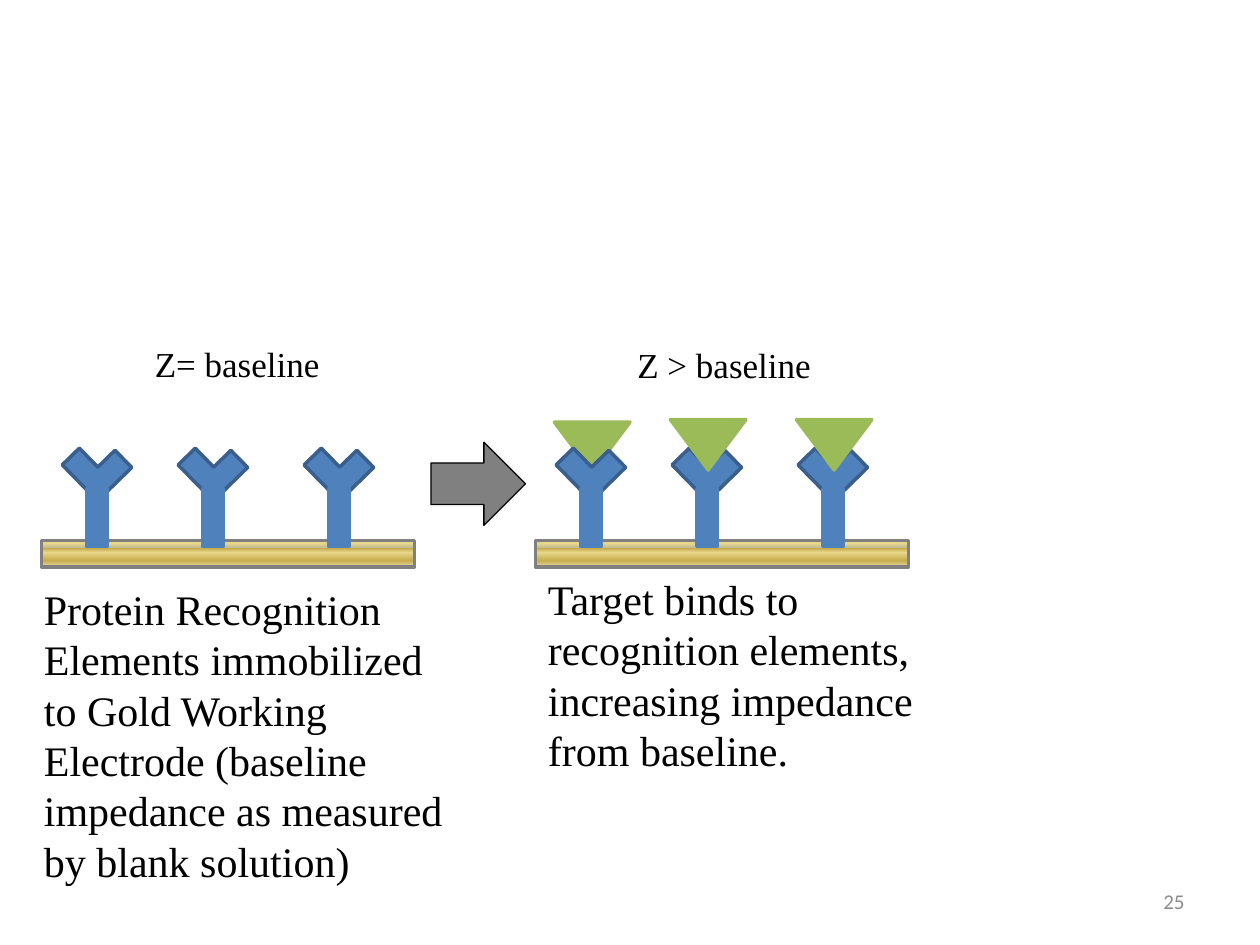
import pptx
import pptx.dml.color
import pptx.enum.shapes
import pptx.enum.text
import pptx.oxml
import pptx.oxml.ns
import pptx.util
from lxml import etree

Pt = pptx.util.Pt
RGB = pptx.dml.color.RGBColor
SHAPE = pptx.enum.shapes.MSO_SHAPE
ALIGN = pptx.enum.text.PP_ALIGN
ANCHOR = pptx.enum.text.MSO_ANCHOR

BLACK = RGB(0x00, 0x00, 0x00)
GRAY = RGB(0x80, 0x80, 0x80)
PALE_GRAY = RGB(0x8C, 0x8C, 0x8C)
BLUE = RGB(0x4F, 0x81, 0xBD)
DARK_BLUE = RGB(0x3A, 0x5F, 0x8C)
GREEN = RGB(0x9B, 0xBB, 0x59)
LIGHT_GOLD = RGB(0xE6, 0xD7, 0x8A)
DEEP_GOLD = RGB(0xC7, 0xAC, 0x4C)
TAN = RGB(0xC4, 0xBD, 0x97)
CREAM = RGB(0xE6, 0xDC, 0xAC)
GOLD_STOPS = [(12, LIGHT_GOLD), (26, TAN), (30, DEEP_GOLD),
              (45, LIGHT_GOLD), (77, DEEP_GOLD), (100, CREAM)]

BASELINE_ELECTRODE = 23.76
BOUND_ELECTRODE = 306
SITES = [18, 84.24, 156.24]


class SensorSlide:
    """Draws the elements of an impedance sensor slide in one style."""

    def __init__(self, slide, font="Times New Roman"):
        self.slide = slide
        self.font = font

    def shape(self, kind, box, fill, line, width=2, rotation=0, parent=None):
        drawn = (parent or self.slide).shapes.add_shape(kind, *map(Pt, box))
        drawn.shadow.inherit = False
        drawn.rotation = rotation
        drawn.fill.solid()
        drawn.fill.fore_color.rgb = fill
        drawn.line.color.rgb = line
        drawn.line.width = Pt(width)
        return drawn

    def electrode(self, left):
        plate = self.shape(SHAPE.RECTANGLE, (left, 308.88, 213.12, 15.12), LIGHT_GOLD, GRAY)
        plate.fill.gradient()
        qn = pptx.oxml.ns.qn
        gradient = plate.element.spPr.find(qn("a:gradFill"))
        stop_list = gradient.find(qn("a:gsLst"))
        for stop in list(stop_list):
            stop_list.remove(stop)
        for percent, color in GOLD_STOPS:
            stop = etree.SubElement(stop_list, qn("a:gs"), pos=str(percent * 1000))
            etree.SubElement(stop, qn("a:srgbClr"), val=str(color))
        gradient.find(qn("a:lin")).set("ang", "5400000")

    def antibody(self, left):
        group = self.slide.shapes.add_group_shape()
        self.shape(SHAPE.CORNER, (left, 252, 27.36, 28.8), BLUE, DARK_BLUE,
                   rotation=315.6, parent=group)
        self.shape(SHAPE.RECTANGLE, (left + 7.92, 279.36, 11.52, 33.12), BLUE, BLUE,
                   parent=group)

    def target(self, left, top):
        self.shape(SHAPE.ISOSCELES_TRIANGLE, (left, top, 43.2, 28.8), GREEN, GREEN,
                   rotation=180)

    def text(self, words, box, size, color=BLACK, font=None,
             align=ALIGN.LEFT, anchor=ANCHOR.TOP):
        frame = self.slide.shapes.add_textbox(*map(Pt, box)).text_frame
        frame.word_wrap = True
        frame.vertical_anchor = anchor
        paragraph = frame.paragraphs[0]
        paragraph.alignment = align
        run = paragraph.add_run()
        run.text = words
        run.font.name = font or self.font
        run.font.size = Pt(size)
        run.font.color.rgb = color


def main():
    deck = pptx.Presentation()
    deck.slide_width, deck.slide_height = Pt(720), Pt(540)
    sensor = SensorSlide(deck.slides.add_slide(deck.slide_layouts[6]))

    sensor.text("25", (516.24, 500.4, 167.76, 28.8), 12, PALE_GRAY, "Calibri",
                ALIGN.RIGHT, ANCHOR.MIDDLE)
    first_site, *other_sites = SITES
    sensor.target(BOUND_ELECTRODE + first_site - 7.2, 241.2)
    for electrode in (BASELINE_ELECTRODE, BOUND_ELECTRODE):
        sensor.electrode(electrode)
        for site in SITES:
            sensor.antibody(electrode + site)
    for site in other_sites:
        sensor.target(BOUND_ELECTRODE + site - 7.2, 239.76)
    sensor.shape(SHAPE.RIGHT_ARROW, (246.24, 252.72, 54, 47.52), GRAY, BLACK, 0.75)

    sensor.text("Protein Recognition Elements immobilized to Gold Working Electrode "
                "(baseline impedance as measured by blank solution)",
                (18, 329.76, 246.24, 181.44), 24)
    sensor.text("Target binds to recognition elements, increasing impedance from baseline.",
                (306, 324, 234, 123.84), 24)
    sensor.text("Z= baseline", (81.36, 192.24, 126, 31.68), 20)
    sensor.text("Z ˃ baseline", (357.12, 192.96, 141.12, 31.68), 20)
    deck.save("out.pptx")


if __name__ == "__main__":
    main()
